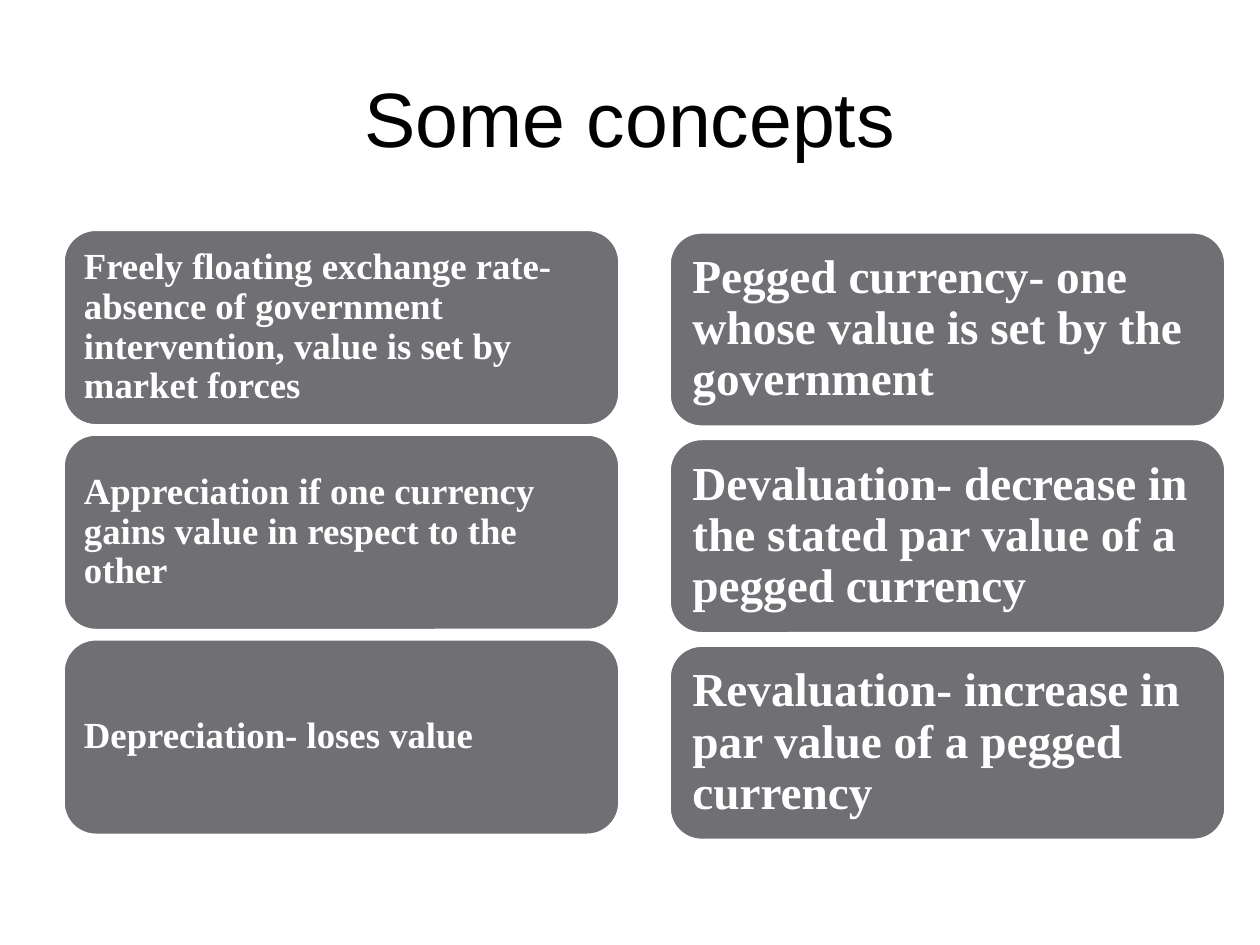
import pptx
import pptx.util
import pptx.dml.color
import pptx.enum.shapes
import pptx.enum.text

Inches = pptx.util.Inches
Pt = pptx.util.Pt
RGBColor = pptx.dml.color.RGBColor
MIDDLE = pptx.enum.text.MSO_ANCHOR.MIDDLE
ALIGN = pptx.enum.text.PP_ALIGN

COLORS = {"title": "000000", "card": "6F6F74", "white": "FFFFFF"}


def style_text(paragraph, font_name, size, color, bold):
    for run in paragraph.runs:
        run.font.name = font_name
        run.font.size = Pt(size)
        run.font.bold = bold
        run.font.color.rgb = RGBColor.from_string(COLORS[color])


presentation = pptx.Presentation()
presentation.slide_width = Inches(10)
presentation.slide_height = Inches(7.5)
slide = presentation.slides.add_slide(presentation.slide_layouts[5])

title = slide.shapes.title
title.left, title.top = Inches(0.5), Inches(0.3)
title.width, title.height = Inches(9), Inches(1.25)
title.text_frame.text = "Some concepts"
title.text_frame.vertical_anchor = MIDDLE
title.text_frame.paragraphs[0].alignment = ALIGN.CENTER
style_text(title.text_frame.paragraphs[0], "Arial", 44, "title", False)

columns = [
    {
        "left": 0.5, "top": 1.82, "pitch": 1.625, "height": 1.56,
        "size": 21, "inset": 0.09,
        "concepts": [
            "Freely floating exchange rate- absence of government intervention, "
            "value is set by market forces",
            "Appreciation if one currency gains value in respect to the other",
            "Depreciation- loses value",
        ],
    },
    {
        "left": 5.31, "top": 1.84, "pitch": 1.64, "height": 1.55,
        "size": 27, "inset": 0.11,
        "concepts": [
            "Pegged currency- one whose value is set by the government",
            "Devaluation- decrease in the stated par value of a pegged currency",
            "Revaluation- increase in par value of a pegged currency",
        ],
    },
]

for column in columns:
    for row, concept in enumerate(column["concepts"]):
        card = slide.shapes.add_shape(
            pptx.enum.shapes.MSO_SHAPE.ROUNDED_RECTANGLE,
            Inches(column["left"]),
            Inches(column["top"] + row * column["pitch"]),
            Inches(4.42),
            Inches(column["height"]),
        )
        card.shadow.inherit = False
        card.fill.solid()
        card.fill.fore_color.rgb = RGBColor.from_string(COLORS["card"])
        card.line.color.rgb = RGBColor.from_string(COLORS["white"])
        card.line.width = Pt(2)

        text_frame = card.text_frame
        text_frame.word_wrap = True
        text_frame.vertical_anchor = MIDDLE
        text_frame.margin_left = text_frame.margin_right = Inches(column["inset"])
        text_frame.margin_top = text_frame.margin_bottom = Inches(column["inset"])
        text_frame.text = concept
        paragraph = text_frame.paragraphs[0]
        paragraph.alignment = ALIGN.LEFT
        paragraph.line_spacing = 0.9
        style_text(paragraph, "Times New Roman", column["size"], "white", True)

presentation.save("out.pptx")
